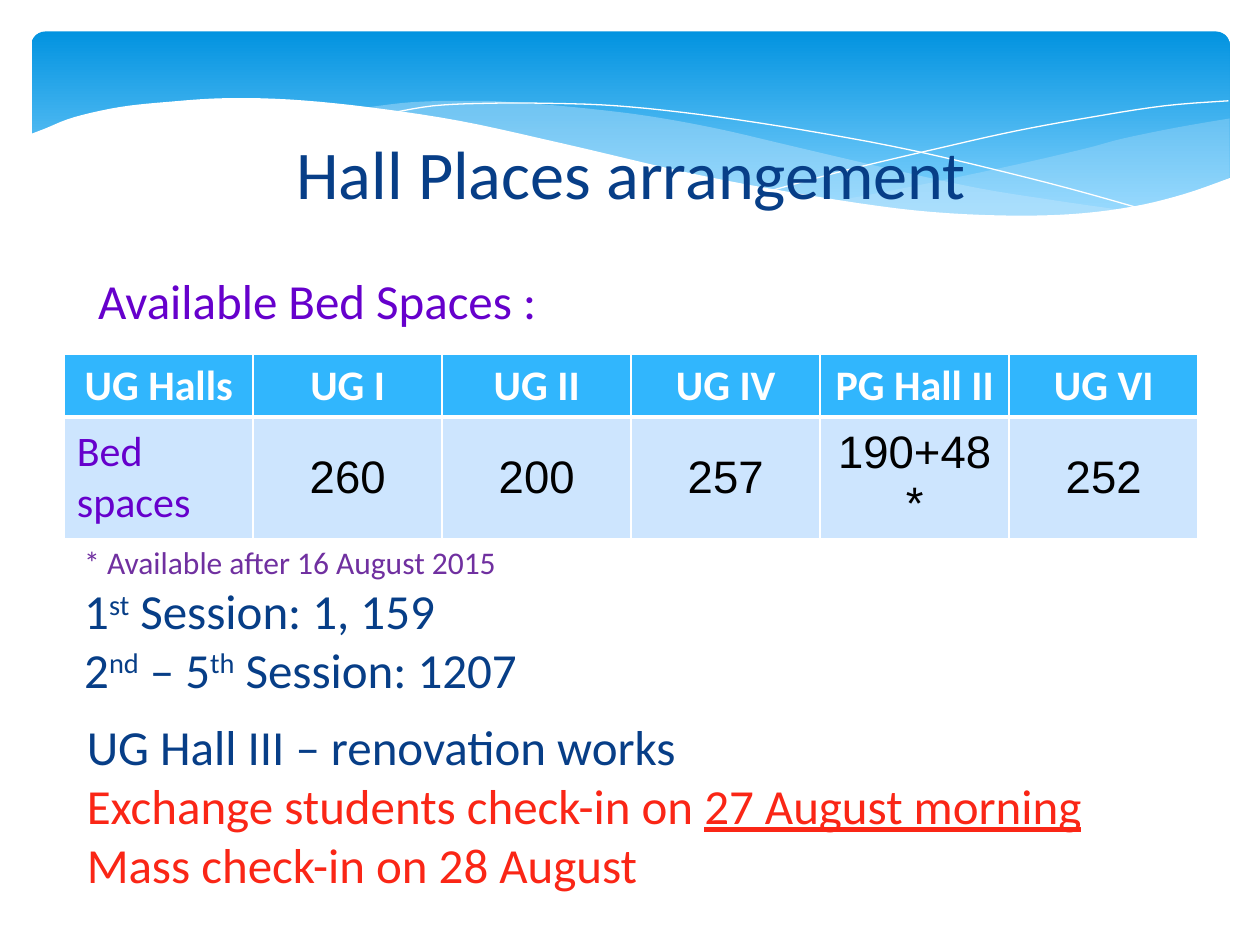
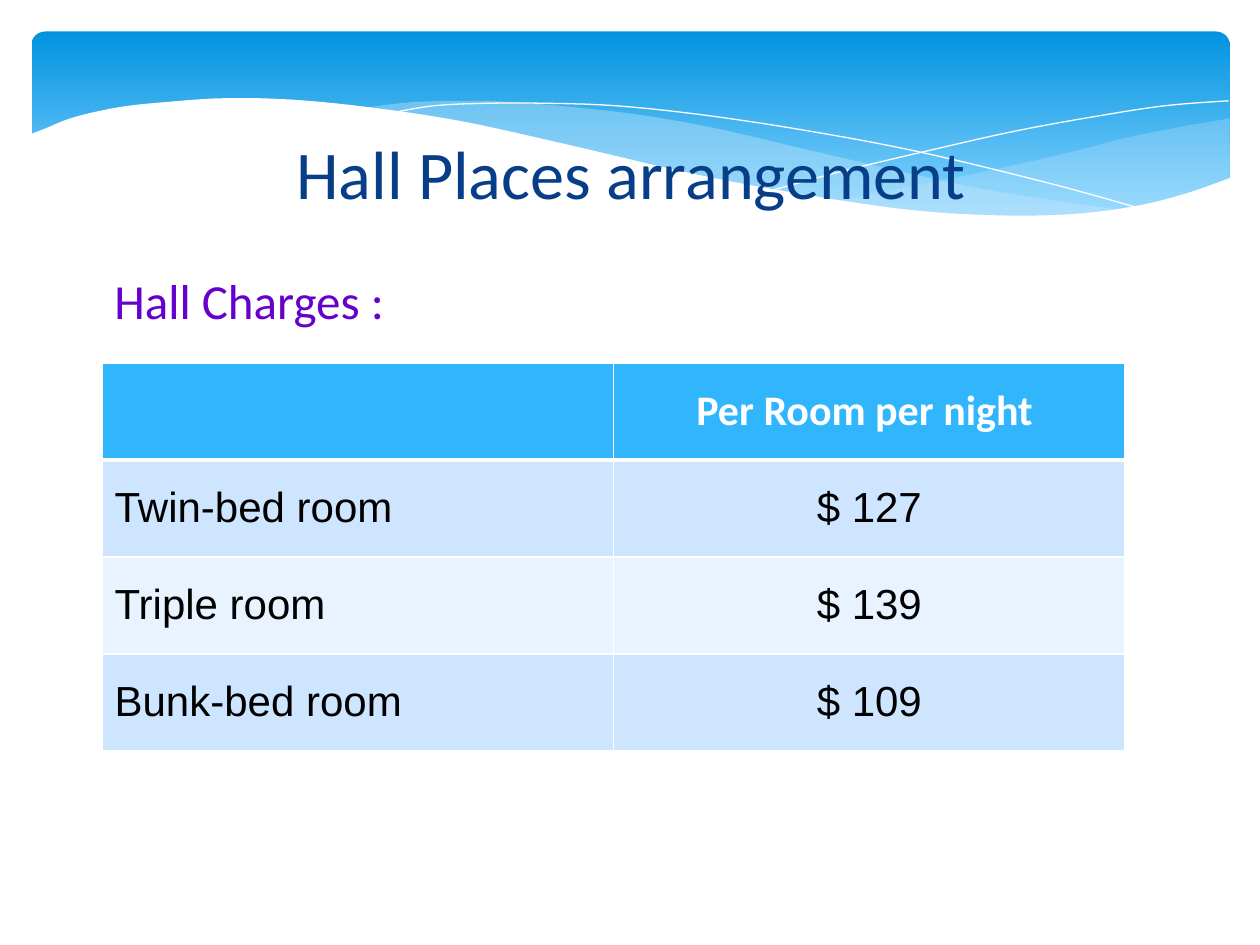
from lxml import etree
from pptx import Presentation
from pptx import util as u
from pptx.dml.color import RGBColor
from pptx.enum import shapes, text
from pptx.oxml.ns import qn

WHITE = RGBColor(0xFF, 0xFF, 0xFF)
BLACK = RGBColor(0x00, 0x00, 0x00)
NAVY = RGBColor(0x07, 0x3E, 0x87)
PURPLE = RGBColor(0x66, 0x00, 0xCC)
VIOLET = RGBColor(0x70, 0x30, 0xA0)
RED = RGBColor(0xFA, 0x26, 0x16)
BAND_TOP = RGBColor(0x02, 0x93, 0xE0)
BAND_BOTTOM = RGBColor(0x83, 0xD3, 0xFE)
WAVE = RGBColor(0xC6, 0xE7, 0xFC)
HEADER = RGBColor(0x31, 0xB6, 0xFD)
ROW_DARK = RGBColor(0xCD, 0xE5, 0xFE)
ROW_LIGHT = RGBColor(0xE8, 0xF3, 0xFF)
LEFT, CENTER = text.PP_ALIGN.LEFT, text.PP_ALIGN.CENTER
TOP, MIDDLE, BOTTOM = text.MSO_ANCHOR.TOP, text.MSO_ANCHOR.MIDDLE, text.MSO_ANCHOR.BOTTOM

TITLE = "Hall Places arrangement"
BED_SPACES = [
    ["UG Halls", "UG I", "UG II", "UG IV", "PG Hall II", "UG VI"],
    ["Bed spaces", "260", "200", "257", "190+48*", "252"],
]
HALL_CHARGES = [
    ["", "Per Room per night "],
    ["Twin-bed room", "$ 127"],
    ["Triple room", "$ 139"],
    ["Bunk-bed room", "$ 109"],
]
SESSIONS = [
    (18, VIOLET, [("* Available after 16 August 2015", "")]),
    (28, NAVY, [("1", ""), ("st", "super"), (" Session: 1, 159", "")]),
    (28, NAVY, [("2", ""), ("nd", "super"), (" – 5", ""), ("th", "super"), (" Session: 1207", "")]),
]
CHECK_IN = [
    (28, NAVY, [("UG Hall III – renovation works", "")]),
    (28, RED, [("Exchange students check-in on ", ""), ("27 August morning", "underline")]),
    (28, RED, [("Mass check-in on 28 August", "")]),
]

RIGHT_WAVE = [
    [(9.76, 0.94), (9.35, 1.01), (8.91, 1.1), (8.61, 1.18), (8.05, 1.31), (7.29, 1.47), (6.61, 1.6)],
    [(6.61, 1.6), (7.05, 1.65), (7.57, 1.7), (8.14, 1.72), (8.63, 1.7), (9.05, 1.63), (9.42, 1.54), (9.76, 1.41)],
]
LONG_WAVE = [
    [(8.93, 1.67), (8.37, 1.59), (7.75, 1.49), (7.06, 1.34), (6.29, 1.16), (5.69, 1.02), (5.14, 0.92),
     (4.65, 0.86), (4.2, 0.82), (3.8, 0.8), (3.28, 0.81), (2.86, 0.86)],
    [(2.86, 0.86), (3.42, 0.94), (4.04, 1.06), (4.49, 1.16), (5.3, 1.35), (6.01, 1.5), (6.65, 1.61),
     (7.22, 1.68), (7.73, 1.72), (8.18, 1.73), (8.57, 1.71), (8.93, 1.67)],
]
FALLING_LINE = [
    [(3.09, 0.9), (3.44, 0.84), (3.87, 0.82), (4.33, 0.82), (4.89, 0.84), (5.56, 0.91), (6.36, 1.03),
     (7.27, 1.2), (8.31, 1.45), (9.07, 1.66)],
]
RISING_LINE = [
    [(6.13, 1.51), (6.72, 1.35), (7.48, 1.17), (8.06, 1.04), (8.66, 0.93), (9.24, 0.84), (9.75, 0.8)],
]
WHITE_WAVE = [
    [(9.77, 1.41), (9.4, 1.54), (8.99, 1.64), (8.5, 1.7), (7.93, 1.71), (7.26, 1.67), (6.48, 1.56),
     (5.55, 1.39), (4.47, 1.14), (3.65, 0.96), (2.92, 0.85), (2.3, 0.79), (1.77, 0.78), (1.32, 0.81),
     (0.95, 0.85), (0.59, 0.93), (0.36, 1.02), (0.23, 1.07)],
    [(0.23, 2.24), (9.77, 2.24)],
]
BAND_PARTS = [
    (RIGHT_WAVE, WAVE, 29),
    (LONG_WAVE, WAVE, 40),
    (FALLING_LINE, None, None),
    (RISING_LINE, None, None),
    (WHITE_WAVE, WHITE, 100),
]


def smooth(knots, steps=5):
    padded = [knots[0], *knots, knots[-1]]
    curve = [knots[0]]
    for a, b, c, d in zip(padded, padded[1:], padded[2:], padded[3:]):
        for step in range(1, steps + 1):
            t = step / steps
            curve.append(tuple(
                0.5 * (2 * q + (r - p) * t + (2 * p - 5 * q + 4 * r - s) * t**2
                       + (3 * q - p - 3 * r + s) * t**3)
                for p, q, r, s in zip(a, b, c, d)))
    return curve


def add_curve(slide, edges, color, opacity):
    points = [(u.Inches(x), u.Inches(y)) for edge in edges for x, y in smooth(edge)]
    builder = slide.shapes.build_freeform(*points[0])
    builder.add_line_segments(points[1:], close=color is not None)
    shape = builder.convert_to_shape()
    shape.shadow.inherit = False
    if color is None:
        shape.fill.background()
        shape.line.color.rgb = WHITE
        shape.line.width = u.Pt(0)
        return shape
    shape.fill.solid()
    shape.fill.fore_color.rgb = color
    shape.line.fill.background()
    if opacity < 100:
        fill_color = shape.element.spPr.find(qn("a:solidFill")).find(qn("a:srgbClr"))
        etree.SubElement(fill_color, qn("a:alpha"), val=str(opacity * 1000))
    return shape


def add_band(slide):
    band = slide.shapes.add_shape(shapes.MSO_SHAPE.ROUNDED_RECTANGLE, u.Inches(0.25), u.Inches(0.25),
                                  u.Inches(9.51), u.Inches(1.56))
    band.adjustments[0] = 0.07
    band.shadow.inherit = False
    band.line.fill.background()
    band.fill.gradient()
    band.fill.gradient_angle = 270
    for stop, position, color in zip(band.fill.gradient_stops, (0, 0.9), (BAND_TOP, BAND_BOTTOM)):
        stop.position = position
        stop.color.rgb = color
    parts = [band] + [add_curve(slide, *part) for part in BAND_PARTS]
    layout_tree = slide.slide_layout.shapes.element
    for part in parts:
        layout_tree.append(part.element)


def style(paragraph, size, color, name="Calibri", bold=False, align=LEFT):
    paragraph.alignment = align
    font = paragraph.font
    font.size, font.name, font.bold = u.Pt(size), name, bold
    font.color.rgb = color


def add_text(slide, box, lines, align=LEFT, anchor=TOP):
    frame = slide.shapes.add_textbox(*map(u.Inches, box)).text_frame
    frame.word_wrap = True
    frame.vertical_anchor = anchor
    for index, (size, color, runs) in enumerate(lines):
        paragraph = frame.add_paragraph() if index else frame.paragraphs[0]
        style(paragraph, size, color, align=align)
        for words, effect in runs:
            run = paragraph.add_run()
            run.text = words
            if effect == "underline":
                run.font.underline = True
            elif effect == "super":
                run._r.get_or_add_rPr().set("baseline", "30000")


def set_borders(cell_element, row):
    properties = cell_element.get_or_add_tcPr()
    widths = {"lnL": 1, "lnR": 1, "lnT": 3 if row == 1 else 1, "lnB": 3 if row == 0 else 1}
    for index, (side, width) in enumerate(widths.items()):
        border = etree.Element(qn(f"a:{side}"), w=str(u.Pt(width)))
        fill = etree.SubElement(border, qn("a:solidFill"))
        etree.SubElement(fill, qn("a:srgbClr"), val=str(WHITE))
        properties.insert(index, border)


def add_grid(slide, left, top, column_width, row_heights, rows, body_size, label_style):
    columns = len(rows[0])
    frame = slide.shapes.add_table(len(rows), columns, u.Inches(left), u.Inches(top),
                                   u.Inches(column_width * columns), u.Inches(sum(row_heights)))
    table = frame.table
    table.first_row = table.horz_banding = False
    for column in table.columns:
        column.width = u.Inches(column_width)
    for row, (height, values) in enumerate(zip(row_heights, rows)):
        table.rows[row].height = u.Inches(height)
        for column, value in enumerate(values):
            cell = table.cell(row, column)
            cell.text = value
            cell.vertical_anchor = MIDDLE
            cell.fill.solid()
            cell.fill.fore_color.rgb = HEADER if row == 0 else ROW_DARK if row % 2 else ROW_LIGHT
            paragraph = cell.text_frame.paragraphs[0]
            if row == 0:
                style(paragraph, 24, WHITE, bold=True, align=CENTER)
            elif column == 0:
                style(paragraph, 24, **label_style)
            else:
                style(paragraph, body_size, BLACK, "Arial", align=CENTER)
    for index, cell_element in enumerate(frame.element.iter(qn("a:tc"))):
        set_borders(cell_element, index // columns)


def add_slide(presentation, heading, heading_left, heading_width):
    slide = presentation.slides.add_slide(presentation.slide_layouts[6])
    add_text(slide, (0.51, 0.37, 9, 1.37), [(39, NAVY, [(TITLE, "")])], CENTER, BOTTOM)
    add_text(slide, (heading_left, 2.1, heading_width, 0.57), [(28, PURPLE, [(heading, "")])])
    return slide


def main():
    presentation = Presentation()
    presentation.slide_width, presentation.slide_height = u.Inches(10), u.Inches(7.5)

    bed_slide = add_slide(presentation, "Available Bed Spaces :", 0.68, 3.86)
    add_band(bed_slide)
    add_grid(bed_slide, 0.51, 2.81, 1.5, [0.49, 0.85], BED_SPACES, 26, {"color": PURPLE})
    add_text(bed_slide, (0.57, 4.26, 8.21, 1.38), SESSIONS)
    add_text(bed_slide, (0.59, 5.64, 9.41, 1.51), CHECK_IN)

    charge_slide = add_slide(presentation, "Hall Charges :", 0.81, 2.44)
    add_grid(charge_slide, 0.81, 2.88, 4.06, [0.77] * 4, HALL_CHARGES, 24,
             {"color": BLACK, "name": "Arial"})

    presentation.save("out.pptx")


if __name__ == "__main__":
    main()
